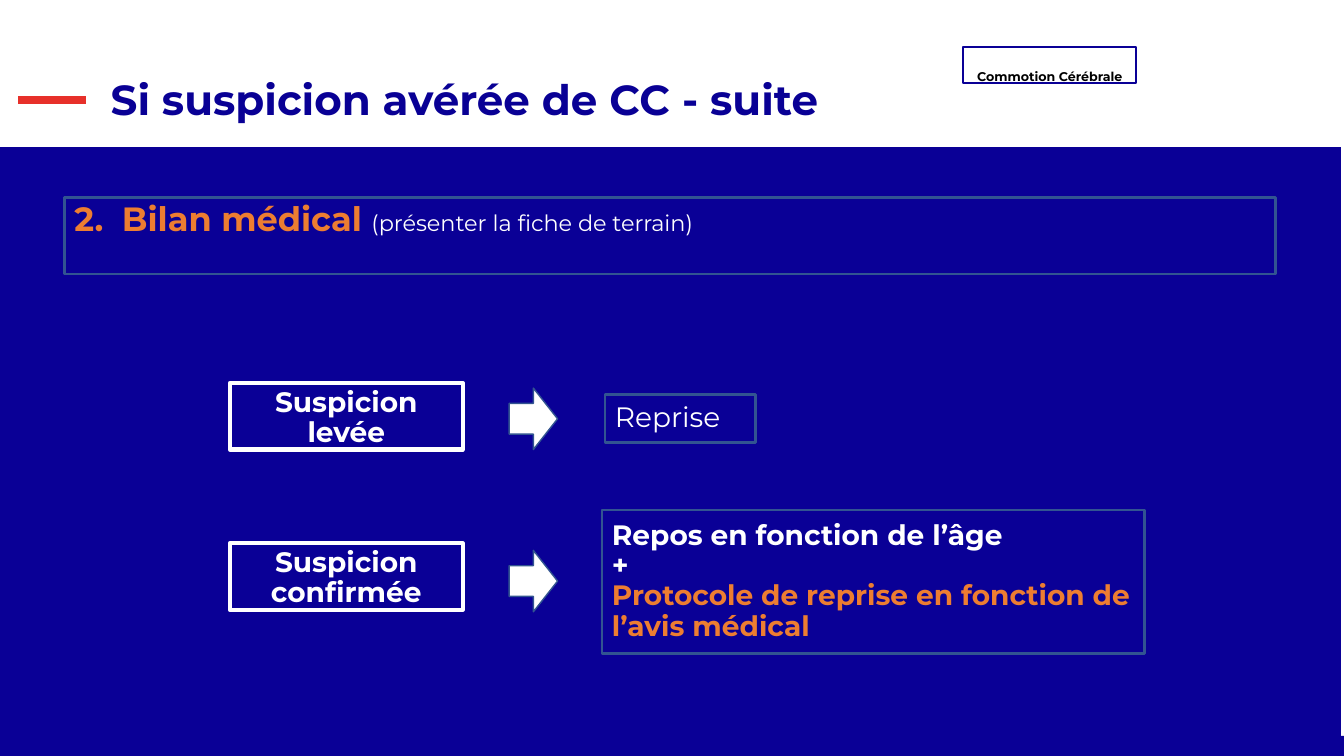
from pptx import Presentation
from pptx.dml.color import RGBColor
from pptx.enum.shapes import MSO_CONNECTOR, MSO_SHAPE
from pptx.enum.text import MSO_ANCHOR, PP_ALIGN
from pptx.oxml.ns import qn
from pptx.util import Inches, Pt
from lxml import etree

NAVY, STEEL, ORANGE, WHITE = "0A0096", "325491", "ED7D31", "FFFFFF"


def color(hex_code):
    return RGBColor.from_string(hex_code)


def add_box(place, fill=None, line=None, paragraphs=(), align=PP_ALIGN.LEFT,
            anchor=MSO_ANCHOR.TOP, kind=MSO_SHAPE.RECTANGLE):
    """Draw a shape; line is (colour, points), a run is (text, points, colour, bold)."""
    box = page.shapes.add_shape(kind, *[Inches(length) for length in place])
    box.shadow.inherit = False
    if fill:
        box.fill.solid()
        box.fill.fore_color.rgb = color(fill)
    else:
        box.fill.background()
    if line:
        box.line.color.rgb = color(line[0])
        box.line.width = Pt(line[1])
    else:
        box.line.fill.background()
    frame = box.text_frame
    frame.word_wrap = True
    frame.vertical_anchor = anchor
    for index, runs in enumerate(paragraphs):
        para = frame.add_paragraph() if index else frame.paragraphs[0]
        para.alignment = align
        para.line_spacing = 0.9
        for text, size, ink, bold in runs:
            span = para.add_run()
            span.text = text
            span.font.name = "Montserrat"
            span.font.size = Pt(size)
            span.font.bold = bold
            span.font.color.rgb = color(ink)
    return box


deck = Presentation()
deck.slide_width, deck.slide_height = Inches(13.33), Inches(7.5)
page = deck.slides.add_slide(deck.slide_layouts[6])

# Header and background
add_box((0, 7.3, 13.33, 0.2), fill=NAVY)
tag = add_box((9.55, 0.47, 1.72, 0.35), line=(NAVY, 1.5), align=PP_ALIGN.CENTER,
              anchor=MSO_ANCHOR.MIDDLE,
              paragraphs=[[("Commotion Cérébrale", 9, "000000", True)]])
frame = tag.text_frame
frame.margin_left = frame.margin_right = frame.margin_top = frame.margin_bottom = 0
frame.paragraphs[0].line_spacing = 2.5
frame.paragraphs[0].space_after = Pt(8)

dash = page.shapes.add_connector(MSO_CONNECTOR.STRAIGHT, Inches(0.18), Inches(0.99),
                                 Inches(0.85), Inches(0.99))
dash.line.color.rgb = color("E7302A")
dash.line.width = Pt(6)
etree.SubElement(dash.element.spPr, qn("a:effectLst"))

add_box((-0.03, 1.46, 13.33, 5.98), fill=NAVY)
add_box((1, 0.74, 9.94, 0.72),
        paragraphs=[[("Si suspicion avérée de CC - suite", 30, "090095", True)]])

# Step heading, with a hanging indent after its number
heading = add_box((0.64, 1.96, 12.01, 0.76), line=(STEEL, 2), paragraphs=[[
    ("2.\tBilan médical ", 24, ORANGE, True),
    ("(présenter la fiche de terrain)", 16, WHITE, False)]])
indent = heading.text_frame.paragraphs[0]._p.get_or_add_pPr()
indent.set("marL", str(Inches(0.47)))
indent.set("indent", str(Inches(-0.47)))

# Each finding leads to an outcome
branches = [
    ("Suspicion levée", 3.8, 3.85, (6, 3.91, 1.49, 0.48),
     [[("Reprise", 20, WHITE, False)]]),
    ("Suspicion confirmée", 5.39, 5.46, (5.97, 5.06, 5.38, 1.42),
     [[("Repos en fonction de l’âge", 20, WHITE, True)],
      [("+", 20, WHITE, True)],
      [("Protocole de reprise en fonction de l’avis médical", 20, ORANGE, True)]]),
]
for finding, top, arrow_top, outcome_place, outcome in branches:
    add_box((2.28, top, 2.31, 0.66), line=(WHITE, 3), align=PP_ALIGN.CENTER,
            paragraphs=[[(finding, 20, WHITE, True)]])
    add_box((5.05, arrow_top, 0.48, 0.61), fill=WHITE, line=(STEEL, 1),
            kind=MSO_SHAPE.RIGHT_ARROW)
    add_box(outcome_place, line=(STEEL, 2), anchor=MSO_ANCHOR.MIDDLE,
            paragraphs=outcome)

deck.save("out.pptx")
